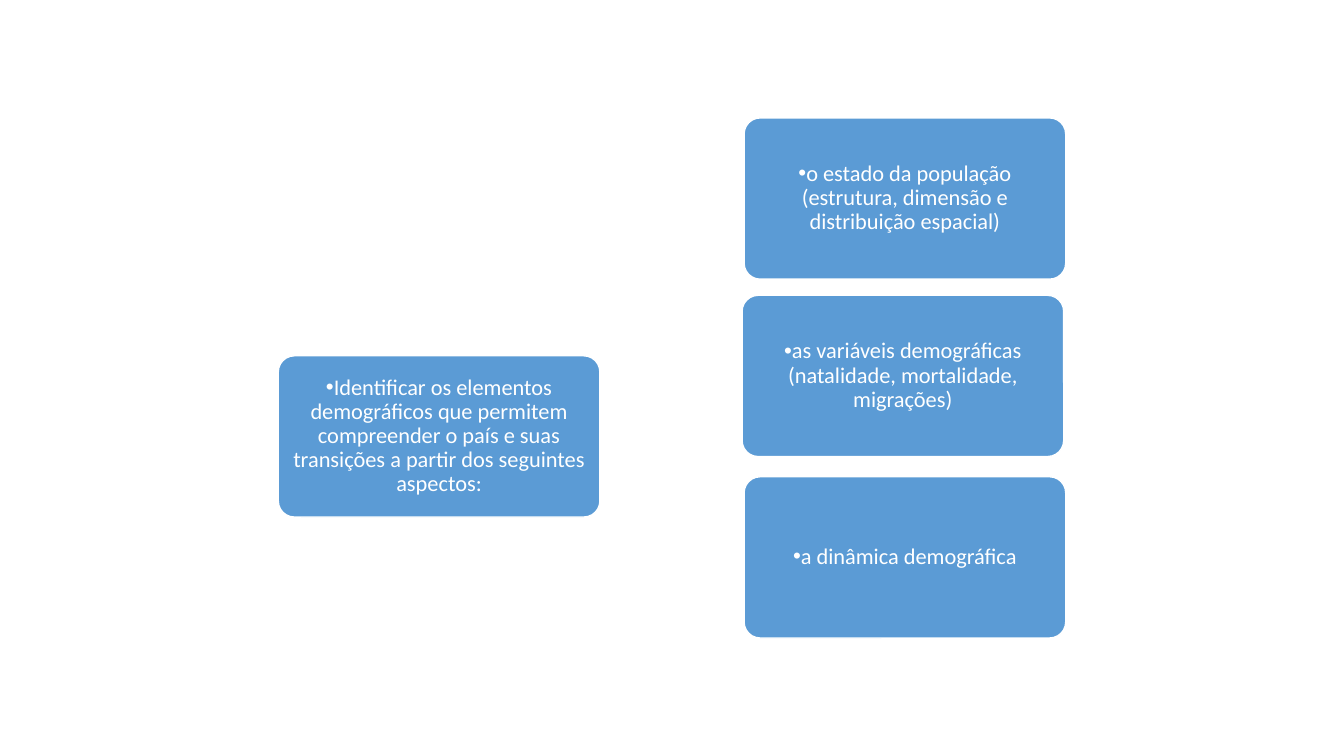
from lxml import etree
from pptx import Presentation
from pptx.dml.color import RGBColor
from pptx.enum import shapes, text
from pptx.oxml import ns
from pptx.util import Inches, Pt

BLUE = RGBColor(0x5B, 0x9B, 0xD5)
WHITE = RGBColor(0xFF, 0xFF, 0xFF)
CARD_WIDTH, CARD_HEIGHT = 3.19, 1.6

CARDS = [
    (2.76, 3.53, "Identificar os elementos demográficos que permitem compreender "
                 "o país e suas transições a partir dos seguintes aspectos:"),
    (7.38, 1.17, "o estado da população (estrutura, dimensão e distribuição espacial)"),
    (7.36, 2.93, "as variáveis demográficas (natalidade, mortalidade, migrações)"),
    (7.38, 4.73, "a dinâmica demográfica"),
]


def write_bullet(frame, words, size=16, color=WHITE, font="Calibri"):
    para = frame.paragraphs[0]
    para.alignment = text.PP_ALIGN.CENTER
    para.line_spacing = 0.9
    span = para.add_run()
    span.text = words
    span.font.size = Pt(size)
    span.font.name = font
    span.font.color.rgb = color
    properties = para._p.get_or_add_pPr()
    properties.set("marL", "0")
    properties.set("indent", "0")
    etree.SubElement(properties, ns.qn("a:buFont"), typeface="Arial")
    etree.SubElement(properties, ns.qn("a:buChar"), char="•")


def add_card(page, left, top, words):
    box = page.shapes.add_shape(
        shapes.MSO_SHAPE.ROUNDED_RECTANGLE,
        Inches(left), Inches(top), Inches(CARD_WIDTH), Inches(CARD_HEIGHT))
    box.adjustments[0] = 0.1
    box.shadow.inherit = False
    box.fill.solid()
    box.fill.fore_color.rgb = BLUE
    box.line.color.rgb = WHITE
    box.line.width = Pt(1)
    frame = box.text_frame
    frame.word_wrap = True
    frame.vertical_anchor = text.MSO_ANCHOR.MIDDLE
    frame.margin_left = frame.margin_right = Inches(0.01)
    frame.margin_top = frame.margin_bottom = Inches(0.01)
    write_bullet(frame, words)


def main():
    deck = Presentation()
    deck.slide_width, deck.slide_height = Inches(13.33), Inches(7.5)
    page = deck.slides.add_slide(deck.slide_layouts[6])
    for left, top, words in CARDS:
        add_card(page, left, top, words)
    deck.save("out.pptx")


if __name__ == "__main__":
    main()
